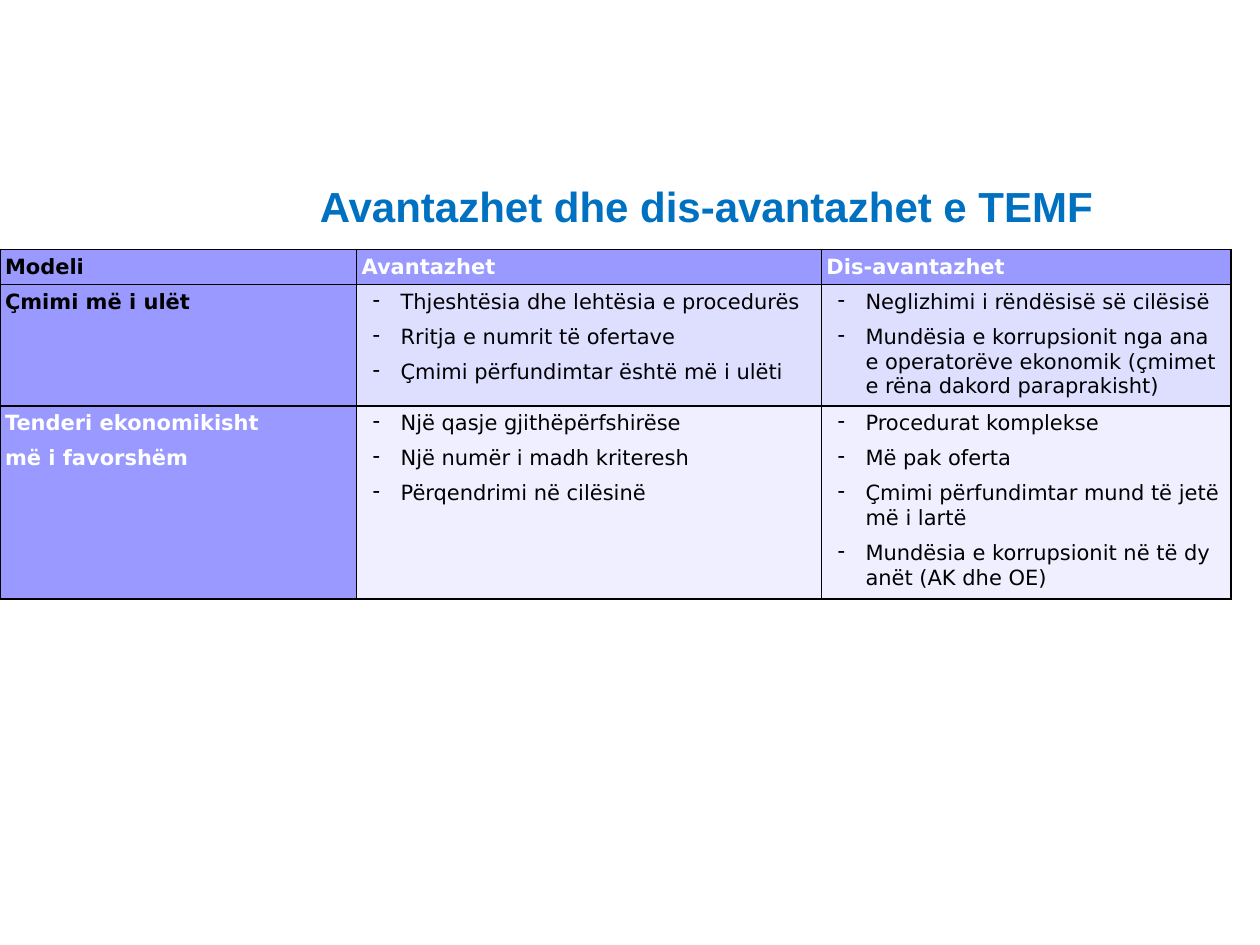
"""Build a slide comparing the advantages and disadvantages of two tender models."""
from lxml import etree
from pptx import Presentation, util as u
from pptx.dml.color import RGBColor
from pptx.enum import text
from pptx.oxml import ns


def paint(target, colour):
    target.solid()
    target.fore_color.rgb = RGBColor.from_string(colour)


def add_span(para, words, font, size, colour, bold):
    span = para.add_run()
    span.text = words
    span.font.name = font
    span.font.size = u.Pt(size)
    span.font.bold = bold
    paint(span.font.fill, colour)


deck = Presentation()
deck.slide_width, deck.slide_height = u.Inches(10), u.Inches(7.5)
page = deck.slides.add_slide(deck.slide_layouts[6])

title = page.shapes.add_textbox(u.Inches(2.44), u.Inches(1.38), u.Inches(6.4), u.Inches(0.5))
title.text_frame.word_wrap = False
title.text_frame.auto_size = text.MSO_AUTO_SIZE.SHAPE_TO_FIT_TEXT
add_span(title.text_frame.paragraphs[0], "Avantazhet dhe dis-avantazhet e TEMF", "Arial", 24, "0070C0", True)

rows = [
    [["Modeli"], ["Avantazhet"], ["Dis-avantazhet"]],
    [
        ["Çmimi më i ulët"],
        ["Thjeshtësia dhe lehtësia e procedurës", "Rritja e numrit të ofertave",
         "Çmimi përfundimtar është më i ulëti"],
        ["Neglizhimi i rëndësisë së cilësisë",
         "Mundësia e korrupsionit nga ana e operatorëve ekonomik (çmimet e rëna dakord paraprakisht)"],
    ],
    [
        ["Tenderi ekonomikisht", "më i favorshëm"],
        ["Një qasje gjithëpërfshirëse", "Një numër i madh kriteresh", "Përqendrimi në cilësinë"],
        ["Procedurat komplekse", "Më pak oferta", "Çmimi përfundimtar mund të jetë më i lartë",
         "Mundësia e korrupsionit në të dy anët (AK dhe OE)"],
    ],
]
widths = [2.83, 3.69, 3.25]
heights = [0.28, 0.95, 1.53]
body_fills = ["9999FF", "DEDEFF", "EFEFFF"]
black_headings = ["Modeli", "Çmimi më i ulët"]

table = page.shapes.add_table(
    3, 3, u.Inches(0), u.Inches(1.98), u.Inches(sum(widths)), u.Inches(sum(heights))).table
for column, width in zip(table.columns, widths):
    column.width = u.Inches(width)
for row, height in zip(table.rows, heights):
    row.height = u.Inches(height)

for row_index, row in enumerate(rows):
    for column_index, lines in enumerate(row):
        cell = table.cell(row_index, column_index)
        cell.margin_left = cell.margin_right = u.Inches(0.04)
        cell.margin_top = cell.margin_bottom = u.Inches(0.04)
        heading = row_index == 0 or column_index == 0
        properties = cell._tc.get_or_add_tcPr()
        for side in ("lnL", "lnR", "lnT", "lnB"):
            border = etree.SubElement(properties, ns.qn(f"a:{side}"), w=str(u.Pt(1)))
            border_fill = etree.SubElement(border, ns.qn("a:solidFill"))
            etree.SubElement(border_fill, ns.qn("a:srgbClr"), val="000000")
        paint(cell.fill, "9999FF" if heading else body_fills[row_index])

        colour = "FFFFFF" if heading and lines[0] not in black_headings else "000000"
        for line_index, line in enumerate(lines):
            frame = cell.text_frame
            para = frame.add_paragraph() if line_index else frame.paragraphs[0]
            if line_index:
                para.space_before = u.Pt(6)
            if not heading:
                layout = para._p.get_or_add_pPr()
                layout.set("marL", str(u.Inches(0.31)))
                layout.set("indent", str(u.Inches(-0.22)))
                etree.SubElement(layout, ns.qn("a:buChar"), char="-")
            add_span(para, line, "DejaVu Sans", 12, colour, heading)

deck.save("out.pptx")
